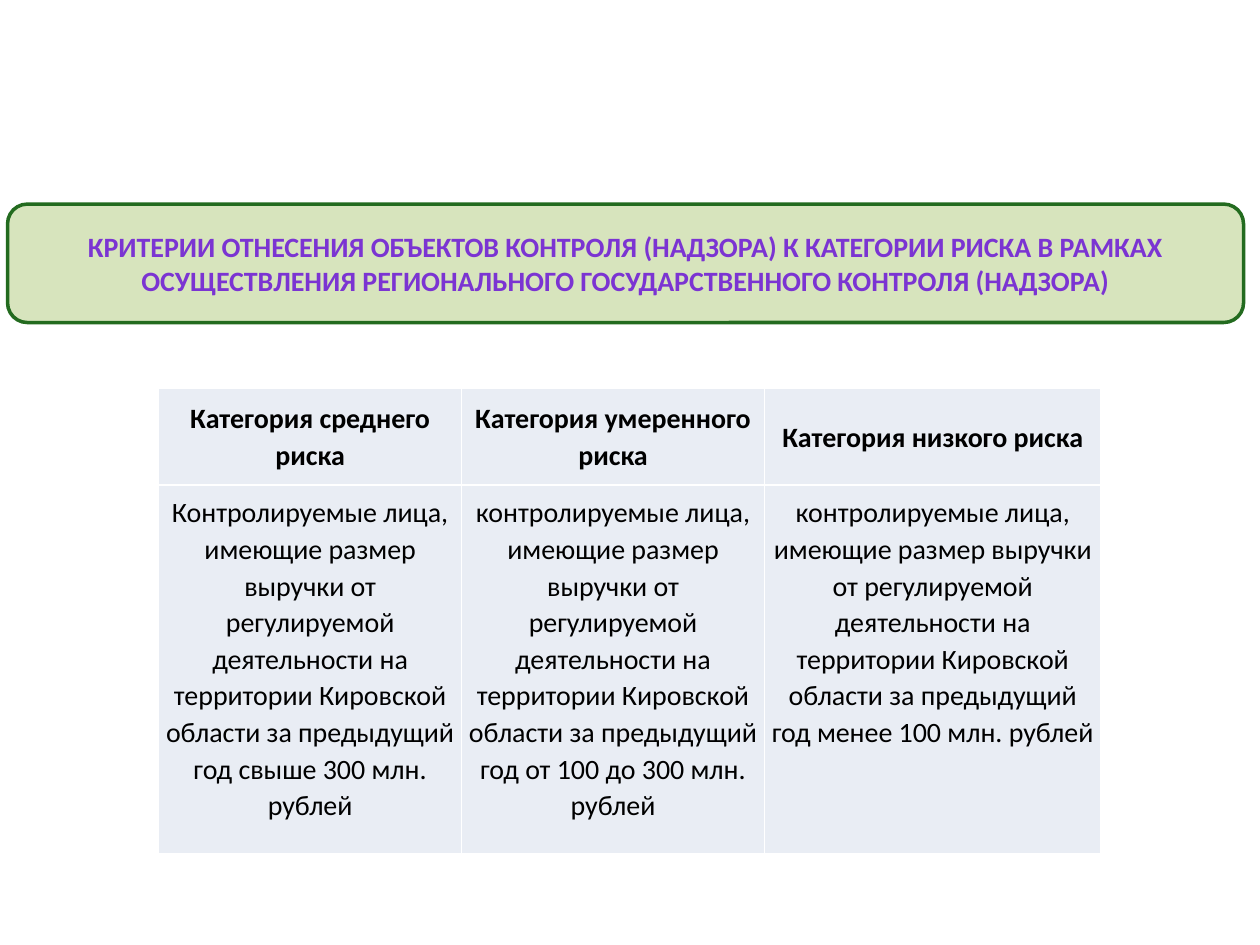
from lxml import etree
from pptx import Presentation
from pptx.dml.color import RGBColor
from pptx.enum.shapes import MSO_SHAPE
from pptx.enum.text import MSO_ANCHOR, PP_ALIGN
from pptx.oxml.ns import qn
from pptx.util import Inches, Pt

ROUNDED = MSO_SHAPE.ROUNDED_RECTANGLE
CENTER = PP_ALIGN.CENTER
MIDDLE, TOP = MSO_ANCHOR.MIDDLE, MSO_ANCHOR.TOP

BLACK = RGBColor(0x00, 0x00, 0x00)
WHITE = RGBColor(0xFF, 0xFF, 0xFF)
PURPLE = RGBColor(0x7B, 0x34, 0xD2)
LIGHT_GREEN = RGBColor(0xD7, 0xE4, 0xBD)
DARK_GREEN = RGBColor(0x23, 0x6B, 0x1F)
PALE_BLUE = RGBColor(0xE9, 0xED, 0xF4)

FONT = "Calibri"
TEXT_SIZE = Pt(16)

# Boxes in inches: left, top, width, height
BANNER_BOX = (0.06, 1.62, 9.81, 0.94)
TABLE_BOX = (1.26, 3.08, 7.48, 3.7)
COLUMN_SHARES = (0.3214, 0.3214, 0.3572)
ROW_SHARES = (0.208, 0.792)

TITLE = ("КРИТЕРИИ ОТНЕСЕНИЯ ОБЪЕКТОВ КОНТРОЛЯ (НАДЗОРА) К КАТЕГОРИИ РИСКА В РАМКАХ "
         "ОСУЩЕСТВЛЕНИЯ РЕГИОНАЛЬНОГО ГОСУДАРСТВЕННОГО КОНТРОЛЯ (НАДЗОРА)")
CRITERION = ("онтролируемые лица, имеющие размер выручки от регулируемой деятельности "
             "на территории Кировской области за предыдущий год")
RISK_ROWS = (
    ("Категория среднего риска", "Категория умеренного риска", "Категория низкого риска"),
    (f"К{CRITERION} свыше 300 млн. рублей",
     f"к{CRITERION} от 100 до 300 млн. рублей",
     f"к{CRITERION} менее 100 млн. рублей"),
)


def write_centered(text_frame, text, color, bold, line_spacing=None):
    paragraph = text_frame.paragraphs[0]
    paragraph.alignment = CENTER
    paragraph.line_spacing = line_spacing
    run = paragraph.add_run()
    run.text = text
    run.font.name = FONT
    run.font.size = TEXT_SIZE
    run.font.bold = bold
    run.font.color.rgb = color


def set_borders(cell, color, width):
    properties = cell._tc.get_or_add_tcPr()
    for position, side in enumerate(("a:lnL", "a:lnR", "a:lnT", "a:lnB")):
        line = etree.Element(qn(side), w=str(int(width)))
        fill = etree.SubElement(line, qn("a:solidFill"))
        etree.SubElement(fill, qn("a:srgbClr"), val=str(color))
        properties.insert(position, line)


def add_banner(slide, box):
    banner = slide.shapes.add_shape(ROUNDED, *map(Inches, box))
    banner.shadow.inherit = False
    banner.fill.solid()
    banner.fill.fore_color.rgb = LIGHT_GREEN
    banner.line.color.rgb = DARK_GREEN
    banner.line.width = Pt(2)
    banner.text_frame.word_wrap = True
    banner.text_frame.vertical_anchor = MIDDLE
    write_centered(banner.text_frame, TITLE, PURPLE, True)


def add_risk_table(slide, box):
    left, top, width, height = map(Inches, box)
    table = slide.shapes.add_table(
        len(ROW_SHARES), len(COLUMN_SHARES), left, top, width, height).table
    for column, share in zip(table.columns, COLUMN_SHARES):
        column.width = int(width * share)
    for row, share in zip(table.rows, ROW_SHARES):
        row.height = int(height * share)

    for row_index, texts in enumerate(RISK_ROWS):
        is_header = row_index == 0
        for column_index, text in enumerate(texts):
            cell = table.cell(row_index, column_index)
            cell.fill.solid()
            cell.fill.fore_color.rgb = PALE_BLUE
            cell.margin_left = cell.margin_right = Inches(0.04)
            cell.margin_top = cell.margin_bottom = Inches(0.07)
            cell.vertical_anchor = MIDDLE if is_header else TOP
            set_borders(cell, WHITE, Pt(1))
            write_centered(cell.text_frame, text, BLACK, is_header, 1.07)


def main():
    presentation = Presentation()
    presentation.slide_width = Inches(10)
    presentation.slide_height = Inches(7.5)
    slide = presentation.slides.add_slide(presentation.slide_layouts[6])
    add_banner(slide, BANNER_BOX)
    add_risk_table(slide, TABLE_BOX)
    presentation.save("out.pptx")


if __name__ == "__main__":
    main()
